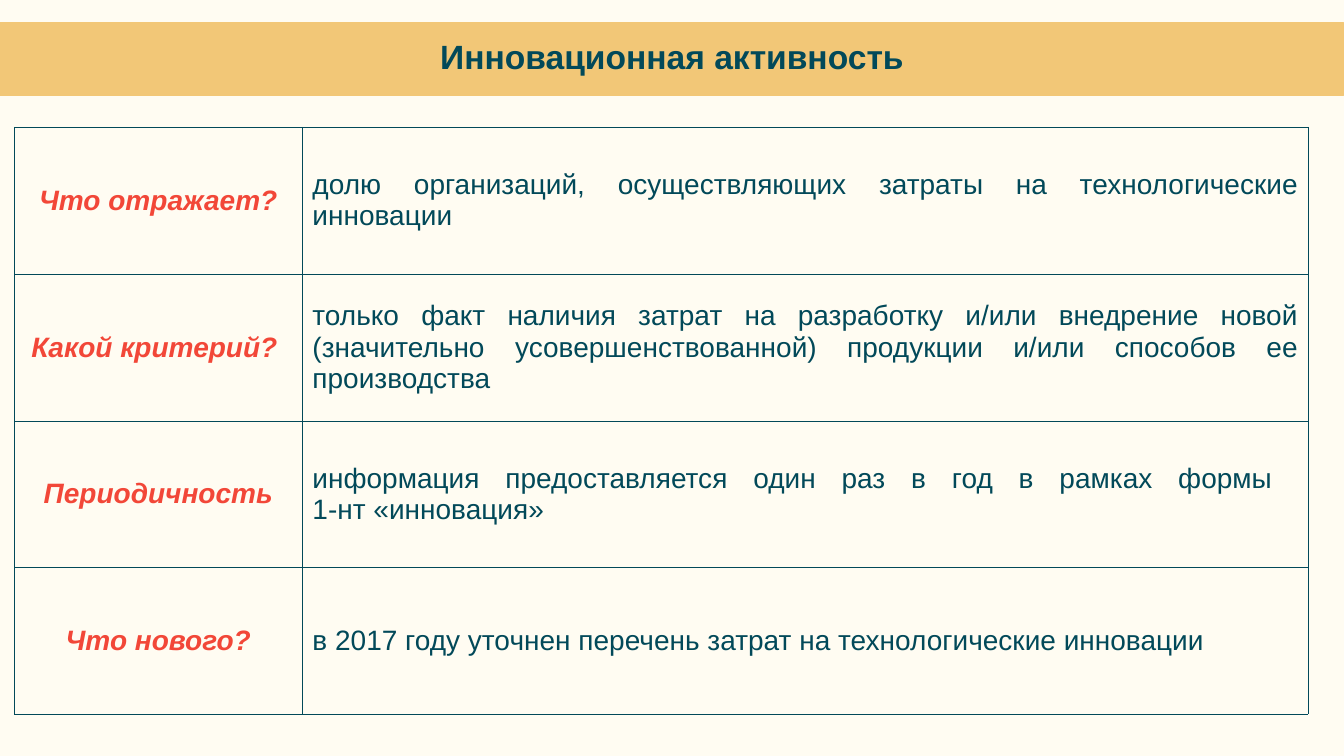
from lxml.etree import SubElement
from pptx import Presentation
from pptx.dml.color import RGBColor
from pptx.enum.shapes import MSO_SHAPE
from pptx.enum.text import MSO_ANCHOR, PP_ALIGN
from pptx.oxml.ns import qn
from pptx.util import Cm, Pt

CREAM = RGBColor(0xFF, 0xFC, 0xF2)
SAND = RGBColor(0xF2, 0xC7, 0x77)
TEAL = RGBColor(0x02, 0x49, 0x59)
RED = RGBColor(0xF2, 0x47, 0x38)


def add_run(para, text, size, color, bold, italic=False):
    run = para.add_run()
    run.text = text
    font = run.font
    font.name = "Arial"
    font.size = Pt(size)
    font.color.rgb = color
    font.bold = bold
    font.italic = italic


def add_border(cell):
    props = cell._tc.get_or_add_tcPr()
    for side in ("a:lnL", "a:lnR", "a:lnT", "a:lnB"):
        line = SubElement(props, qn(side), w=str(Pt(0.25)))
        fill = SubElement(line, qn("a:solidFill"))
        SubElement(fill, qn("a:srgbClr"), val=str(TEAL))


deck = Presentation()
deck.slide_width = Cm(33.87)
deck.slide_height = Cm(19.05)
slide = deck.slides.add_slide(deck.slide_layouts[6])
slide.background.fill.solid()
slide.background.fill.fore_color.rgb = CREAM

banner = slide.shapes.add_shape(MSO_SHAPE.RECTANGLE, 0, Cm(0.6), deck.slide_width, Cm(1.78))
banner.shadow.inherit = False
banner.fill.solid()
banner.fill.fore_color.rgb = SAND
banner.line.color.rgb = SAND
banner.line.width = Pt(2.25)
banner.text_frame.vertical_anchor = MSO_ANCHOR.MIDDLE
title = banner.text_frame.paragraphs[0]
title.alignment = PP_ALIGN.CENTER
title.line_spacing = Pt(24)
add_run(title, "Инновационная активность", 24, TEAL, True)

FULL = PP_ALIGN.JUSTIFY
facts = [
    ("Что отражает?", FULL,
     ["долю организаций, осуществляющих затраты на технологические инновации"]),
    ("Какой критерий? ", FULL,
     ["только факт наличия затрат на разработку и/или внедрение новой "
      "(значительно усовершенствованной) продукции и/или способов ее производства"]),
    ("Периодичность", FULL,
     ["информация предоставляется один раз в год в рамках формы ", "1-нт «инновация»"]),
    ("Что нового?", PP_ALIGN.LEFT,
     ["в 2017 году уточнен перечень затрат на технологические инновации"]),
]

frame = slide.shapes.add_table(len(facts), 2, Cm(0.36), Cm(3.2), Cm(32.61), Cm(14.8))
table = frame.table
table.first_row = False
table.horz_banding = False
table.columns[0].width = Cm(7.26)
table.columns[1].width = Cm(25.35)

for row, (label, align, lines) in enumerate(facts):
    head, body = table.cell(row, 0), table.cell(row, 1)
    for cell in (head, body):
        cell.vertical_anchor = MSO_ANCHOR.MIDDLE
        add_border(cell)
        cell.fill.background()
    para = head.text_frame.paragraphs[0]
    para.alignment = PP_ALIGN.CENTER
    add_run(para, label, 20, RED, True, True)
    para = body.text_frame.paragraphs[0]
    para.alignment = align
    for index, line in enumerate(lines):
        if index:
            para.add_line_break()
        add_run(para, line, 20, TEAL, False)

deck.save("out.pptx")
